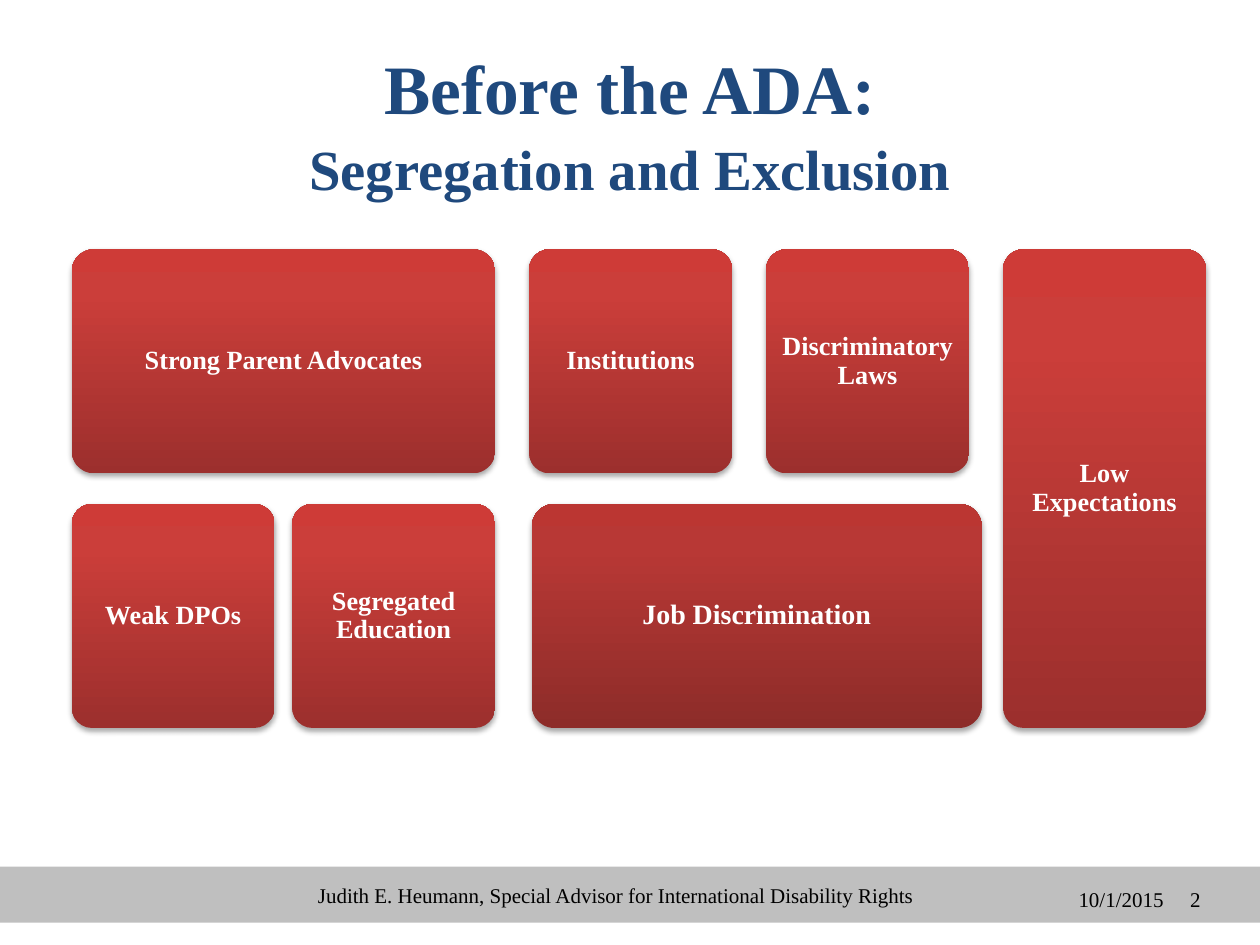
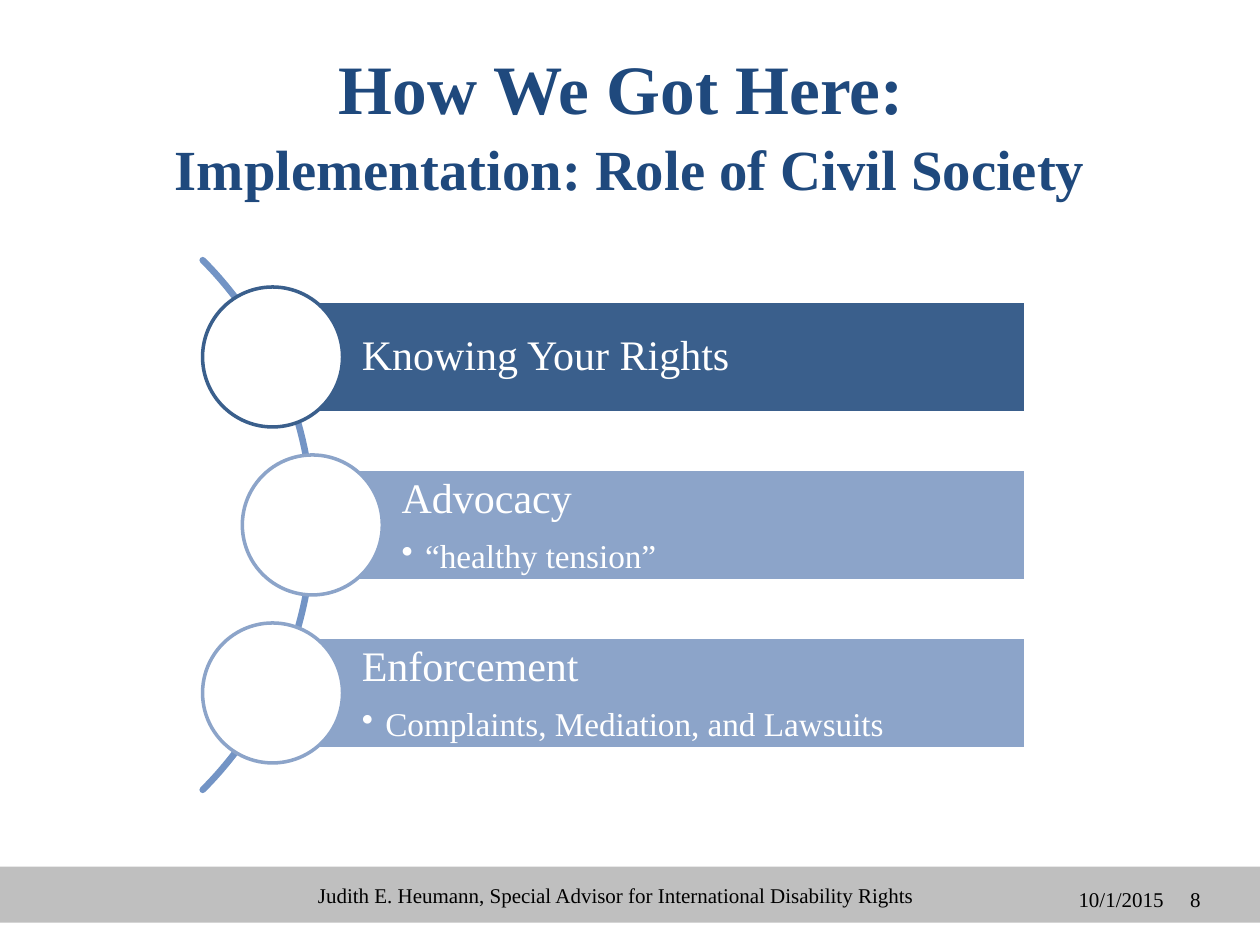
from copy import deepcopy
from math import cos, radians, sin, sqrt

from lxml.etree import SubElement
from pptx import Presentation
from pptx.dml.color import RGBColor
from pptx.enum.shapes import MSO_SHAPE as Shape
from pptx.enum.text import MSO_ANCHOR as Anchor
from pptx.enum.text import MSO_AUTO_SIZE as AutoSize
from pptx.enum.text import PP_ALIGN as Align
from pptx.oxml.ns import qn
from pptx.util import Pt

# Shared style
FONT = "Times New Roman"
WHITE = RGBColor(0xFF, 0xFF, 0xFF)
BLACK = RGBColor(0x00, 0x00, 0x00)
NAVY = RGBColor(0x1F, 0x49, 0x7D)
BAND_GREY = RGBColor(0xBF, 0xBF, 0xBF)
ARC_BLUE = RGBColor(0x73, 0x94, 0xC5)
DARK_BLUE = RGBColor(0x3A, 0x5F, 0x8C)
LIGHT_BLUE = RGBColor(0x8C, 0xA4, 0xC9)
RED_STOPS = [(0, RGBColor(0x9C, 0x2F, 0x2D)), (0.8, RGBColor(0xCB, 0x3E, 0x3A)),
             (1, RGBColor(0xCE, 0x3B, 0x37))]
DEEP_RED_STOPS = [(0, RGBColor(0x8D, 0x2C, 0x29)), (0.8, RGBColor(0xB8, 0x38, 0x35)),
                  (1, RGBColor(0xBB, 0x36, 0x32))]

# Barrier tiles: columns and rows
TILE_WIDTH, TILE_HEIGHT = 116, 128
WIDE_LEFT, WIDE_WIDTH = 41, 242
COLUMNS = [302.4 + 135.4 * i for i in range(3)]
ROWS = [142.5, 288]

# Implementation steps: circles centred on an arc
ARC_X, ARC_Y, ARC_RADIUS = -35.5, 300, 214
STEP_PITCH, BAR_HEIGHT, BAR_RIGHT, CIRCLE = 96, 64, 586, 80


def add_span(para, text, size, color, bold=False):
    span = para.add_run()
    span.text = text
    font = span.font
    font.name, font.size, font.bold = FONT, Pt(size), bold
    font.color.rgb = color


def set_frame(frame, insets=(0, 0, 0, 0), anchor=Anchor.MIDDLE):
    frame.word_wrap = True
    frame.auto_size = AutoSize.NONE
    frame.vertical_anchor = anchor
    (frame.margin_left, frame.margin_top,
     frame.margin_right, frame.margin_bottom) = map(Pt, insets)


def add_box(page, kind, left, top, width, height, fill=None, line=None):
    box = page.shapes.add_shape(kind, Pt(left), Pt(top), Pt(width), Pt(height))
    box.shadow.inherit = False
    if fill is not None:
        box.fill.solid()
        box.fill.fore_color.rgb = fill
    if line is None:
        box.line.fill.background()
    else:
        box.line.color.rgb = line
        box.line.width = Pt(2)
    return box


def add_label(page, text, left, top, width, height, align):
    box = page.shapes.add_textbox(Pt(left), Pt(top), Pt(width), Pt(height))
    set_frame(box.text_frame)
    para = box.text_frame.paragraphs[0]
    para.alignment = align
    add_span(para, text, 12, BLACK)


def add_page(deck, heading, subheading, number):
    page = deck.slides.add_slide(deck.slide_layouts.get_by_name("Title Only"))
    # Footer band
    add_box(page, Shape.RECTANGLE, 0, 495.2, 720, 32, BAND_GREY)
    add_label(page, "Judith E. Heumann, Special Advisor for International Disability Rights",
              160, 497, 384, 29, Align.CENTER)
    add_label(page, "10/1/2015", 526, 499, 139, 29, Align.RIGHT)
    add_label(page, number, 665, 499, 21, 29, Align.RIGHT)
    # Two-line title
    title = page.shapes.title
    title.left, title.top, title.width, title.height = Pt(36), Pt(23.6), Pt(648), Pt(90)
    set_frame(title.text_frame, (7.2, 3.6, 7.2, 3.6))
    para = title.text_frame.paragraphs[0]
    para.alignment = Align.CENTER
    para.line_spacing = 1.08
    add_span(para, heading, 39.6, NAVY, True)
    para.add_line_break()
    add_span(para, subheading, 32.4, NAVY, True)
    return page


def set_gradient(box, stops):
    box.fill.gradient()
    box.fill.gradient_angle = 90
    stop_list = box.element.spPr.find(".//" + qn("a:gsLst"))
    stop_list.append(deepcopy(stop_list[-1]))
    for stop, (position, color) in zip(box.fill.gradient_stops, stops):
        stop.position = position
        stop.color.rgb = color


def add_soft_shadow(box):
    effects = box.element.spPr.find(qn("a:effectLst"))
    shadow = SubElement(effects, qn("a:outerShdw"), blurRad=str(Pt(3.1)), dist=str(Pt(1.8)),
                        dir="5400000", rotWithShape="0")
    color = SubElement(shadow, qn("a:srgbClr"), val=str(BLACK))
    SubElement(color, qn("a:alpha"), val="35000")


def add_tile(page, text, left, top, width=TILE_WIDTH, height=TILE_HEIGHT,
             stops=RED_STOPS, size=15):
    tile = add_box(page, Shape.ROUNDED_RECTANGLE, left, top, width, height)
    tile.adjustments[0] = 0.1
    set_gradient(tile, stops)
    add_soft_shadow(tile)
    set_frame(tile.text_frame, (4.3, 4.3, 4.3, 4.3))
    para = tile.text_frame.paragraphs[0]
    para.alignment = Align.CENTER
    para.line_spacing = 0.9
    add_span(para, text, size, WHITE, True)


def add_arc(page):
    points = [(Pt(ARC_X + ARC_RADIUS * cos(radians(angle))),
               Pt(ARC_Y + ARC_RADIUS * sin(radians(angle)))) for angle in range(-45, 46)]
    builder = page.shapes.build_freeform(*points[0], scale=1.0)
    builder.add_line_segments(points[1:], close=False)
    arc = builder.convert_to_shape()
    arc.shadow.inherit = False
    arc.fill.background()
    arc.line.color.rgb = ARC_BLUE
    arc.line.width = Pt(3.75)
    arc.element.spPr.find(qn("a:ln")).set("cap", "rnd")


def add_bullet(para, indent):
    para.level = 1
    properties = para._p.get_or_add_pPr()
    properties.set("marL", str(Pt(indent)))
    properties.set("indent", str(-Pt(indent)))
    SubElement(properties, qn("a:buChar"), char="•")


def add_step(page, row, color, heading, detail=None):
    offset = (row - 1) * STEP_PITCH
    left = ARC_X + sqrt(ARC_RADIUS ** 2 - offset ** 2)
    middle = ARC_Y + offset
    bar = add_box(page, Shape.RECTANGLE, left, middle - BAR_HEIGHT / 2,
                  BAR_RIGHT - left, BAR_HEIGHT, color, WHITE)
    frame = bar.text_frame
    set_frame(frame, (51, 5, 5, 5), Anchor.TOP if detail else Anchor.MIDDLE)
    para = frame.paragraphs[0]
    para.alignment = Align.LEFT
    para.line_spacing = 0.9
    add_span(para, heading, 24, WHITE)
    if detail:
        para.space_after = Pt(9.7)
        para = frame.add_paragraph()
        para.alignment = Align.LEFT
        para.line_spacing = 0.9
        add_bullet(para, 13.5)
        add_span(para, detail, 19, WHITE)
    add_box(page, Shape.OVAL, left - CIRCLE / 2, middle - CIRCLE / 2,
            CIRCLE, CIRCLE, WHITE, color)


def build_barriers(deck):
    page = add_page(deck, "Before the ADA:", "Segregation and Exclusion", "2")
    upper, lower = ROWS
    add_tile(page, "Strong Parent Advocates", WIDE_LEFT, upper, WIDE_WIDTH)
    add_tile(page, "Weak DPOs", WIDE_LEFT, lower)
    add_tile(page, "Segregated Education", WIDE_LEFT + WIDE_WIDTH - TILE_WIDTH, lower)
    add_tile(page, "Institutions", COLUMNS[0], upper)
    add_tile(page, "Discriminatory Laws", COLUMNS[1], upper)
    add_tile(page, "Low Expectations", COLUMNS[2], upper,
             height=lower + TILE_HEIGHT - upper)
    add_tile(page, "Job Discrimination", 304, lower, 257, stops=DEEP_RED_STOPS, size=16)


def build_implementation(deck):
    page = add_page(deck, "How We Got Here: ", "Implementation: Role of Civil Society", "8")
    add_arc(page)
    add_step(page, 0, DARK_BLUE, "Knowing Your Rights")
    add_step(page, 1, LIGHT_BLUE, "Advocacy", "“healthy tension”")
    add_step(page, 2, LIGHT_BLUE, "Enforcement", "Complaints, Mediation, and Lawsuits")


def main():
    deck = Presentation()
    deck.slide_width, deck.slide_height = Pt(720), Pt(540)
    build_barriers(deck)
    build_implementation(deck)
    deck.save("out.pptx")


if __name__ == "__main__":
    main()
